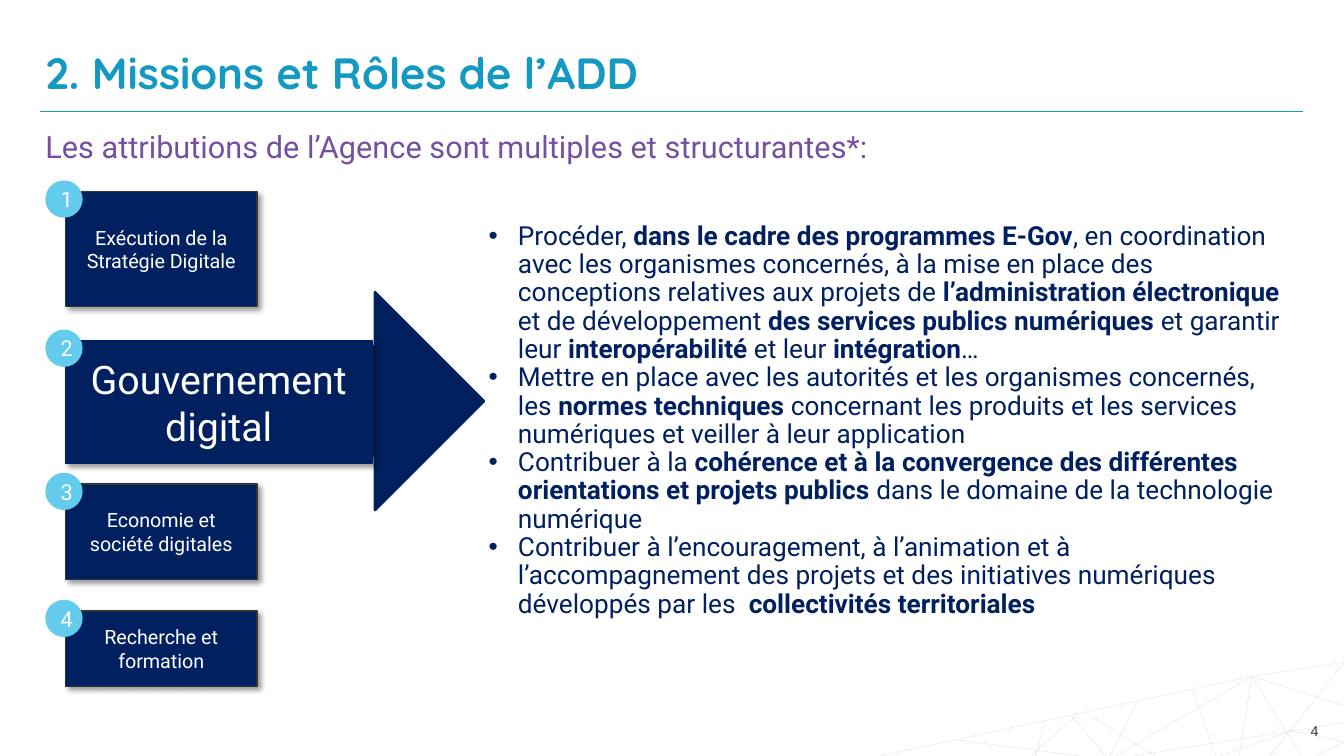
from lxml.etree import SubElement
from pptx import Presentation
from pptx.dml.color import RGBColor
from pptx.enum.shapes import MSO_CONNECTOR, MSO_SHAPE
from pptx.enum.text import MSO_ANCHOR, MSO_AUTO_SIZE, PP_ALIGN
from pptx.oxml.ns import qn
from pptx.util import Inches, Pt

NAVY = RGBColor(0x00, 0x20, 0x60)
TEAL = RGBColor(0x14, 0x9A, 0xC2)
SKY = RGBColor(0x63, 0xCC, 0xEC)
PLUM = RGBColor(0x75, 0x50, 0xA1)
DARK = RGBColor(0x33, 0x33, 0x33)
PALE = RGBColor(0xE0, 0xE0, 0xE0)
WHITE = RGBColor(0xFF, 0xFF, 0xFF)

# The grid has ten columns and ten rows to the inch.
COLS, ROWS = 133.33, 75
LEFT, RIGHT = 4.5, 129.3
BADGE = 3.7

PEAK, KNOT = (124.2, 67.1), (128.1, 72.5)
EAST, MID = (133.33, 73.6), (111.2, 72.9)
MESH = [
    ((130.6, ROWS), EAST), ((126, ROWS), (COLS, 65.7)),
    ((112.4, ROWS), (COLS, 71.7)), ((118.3, 68.4), (120.6, ROWS)),
    (PEAK, (COLS, 65.7)), ((102.8, 74.5), (107, 70.8)),
    ((87.3, ROWS), PEAK), ((102.4, ROWS), (102.8, 74.5)),
    (PEAK, (129.1, ROWS)), (PEAK, (122.9, ROWS)),
    ((121, ROWS), KNOT), (KNOT, EAST), (MID, (114.6, ROWS)),
    ((94.9, 73.4), (107.2, ROWS)), ((110.7, ROWS), PEAK),
    ((102.8, ROWS), (103.6, 71.5)), ((106.3, 71), (109.7, ROWS)),
    ((110.1, ROWS), (112.8, 69.6)), ((107.7, 70.7), MID),
    (PEAK, (COLS, 70)),
]

# Label, top row, width, height, text size, line colour
STEPS = [
    ("Exécution de la Stratégie Digitale", 19, 19, 11.4, 14.1, DARK),
    ("Gouvernement digital", 33.8, 30.4, 12.2, 28.1, NAVY),
    ("Economie et société digitales", 48, 19, 9.5, 14.1, DARK),
    ("Recherche et formation", 60.6, 19, 7.5, 14.1, DARK),
]

# Runs alternate between regular and bold.
ROLES = [
    ["Procéder, ", "dans le cadre des programmes E-Gov",
     ", en coordination avec les organismes concernés, à la mise en place "
     "des conceptions relatives aux projets de ",
     "l’administration électronique ", "et de développement ",
     "des services publics numériques ", "et garantir leur ",
     "interopérabilité", " et leur ", "intégration", "…"],
    ["Mettre en place avec les autorités et les organismes concernés, les ",
     "normes techniques ",
     "concernant les produits et les services numériques et veiller à leur "
     "application"],
    ["Contribuer à la ",
     "cohérence et à la convergence des différentes orientations et projets "
     "publics ",
     "dans le domaine de la technologie numérique"],
    ["Contribuer à l’encouragement, à l’animation et à l’accompagnement des "
     "projets et des initiatives numériques développés par les  ",
     "collectivités territoriales"],
]


def grid(*cells):
    return [Inches(cell / 10) for cell in cells]


def add_run(para, text, size, color, face="Roboto", bold=False):
    run = para.add_run()
    run.text = text
    font = run.font
    font.size, font.name, font.bold = Pt(size), face, bold
    font.color.rgb = color


def set_frame(frame, anchor=MSO_ANCHOR.TOP, inset=None, wrap=True):
    frame.word_wrap = wrap
    frame.auto_size = MSO_AUTO_SIZE.NONE
    frame.vertical_anchor = anchor
    if inset is not None:
        frame.margin_left = frame.margin_right = inset
        frame.margin_top = frame.margin_bottom = inset


def add_line(slide, start, end, color, width):
    line = slide.shapes.add_connector(
        MSO_CONNECTOR.STRAIGHT, *grid(*start, *end))
    line.line.color.rgb = color
    line.line.width = Pt(width)
    SubElement(line._element.spPr, qn("a:effectLst"))


def add_block(slide, kind, cells, fill, edge=None, width=1):
    block = slide.shapes.add_shape(kind, *grid(*cells))
    block.shadow.inherit = False
    block.fill.solid()
    block.fill.fore_color.rgb = fill
    if edge is None:
        block.line.fill.background()
    else:
        block.line.color.rgb = edge
        block.line.width = Pt(width)
    return block


def add_label(block, text, size):
    set_frame(block.text_frame, MSO_ANCHOR.MIDDLE)
    para = block.text_frame.paragraphs[0]
    para.alignment = PP_ALIGN.CENTER
    add_run(para, text, size, WHITE)


def cast_shadow(block):
    """Drop a soft black shadow to the lower right."""
    effects = block._element.spPr.find(qn("a:effectLst"))
    shadow = SubElement(effects, qn("a:outerShdw"), blurRad=str(Pt(4)),
                        dist=str(Pt(3)), dir="2700000", algn="tl",
                        rotWithShape="0")
    black = SubElement(shadow, qn("a:srgbClr"), val="000000")
    SubElement(black, qn("a:alpha"), val="40000")


def add_step(slide, num, step):
    """Add a shadowed box with its numbered badge on the corner."""
    text, top, width, height, size, edge = step
    box = add_block(slide, MSO_SHAPE.RECTANGLE,
                    (LEFT + 2, top, width, height), NAVY, edge)
    cast_shadow(box)
    add_label(box, text, size)
    badge = add_block(slide, MSO_SHAPE.OVAL,
                      (LEFT, top - 1.1, BADGE, BADGE), SKY)
    add_label(badge, str(num), 15.6)


def add_text(slide, cells, text, size, color, align, face="Roboto", **frame):
    box = slide.shapes.add_textbox(*grid(*cells))
    set_frame(box.text_frame, inset=0, **frame)
    para = box.text_frame.paragraphs[0]
    para.alignment = align
    add_run(para, text, size, color, face)


def set_title(slide, text):
    title = slide.shapes.title
    title.left, title.top, title.width, title.height = grid(
        LEFT, 4.5, 125.3, 4.9)
    set_frame(title.text_frame, inset=0)
    para = title.text_frame.paragraphs[0]
    para.alignment = PP_ALIGN.LEFT
    add_run(para, text, 31.2, TEAL, "Quicksand", True)


def add_roles(slide):
    frame = slide.shapes.add_textbox(*grid(47.5, 21.6, 81.8, 40.7)).text_frame
    set_frame(frame)
    for num, role in enumerate(ROLES):
        para = frame.add_paragraph() if num else frame.paragraphs[0]
        para.line_spacing = 0.9
        props = para._p.get_or_add_pPr()
        props.set("marL", str(Inches(0.29)))
        props.set("indent", str(-Inches(0.29)))
        SubElement(props, qn("a:buFont"), typeface="Arial")
        SubElement(props, qn("a:buChar"), char="•")
        for place, text in enumerate(role):
            add_run(para, text, 18.7, NAVY, bold=place % 2 == 1)


def main():
    deck = Presentation()
    deck.slide_width, deck.slide_height = grid(COLS, ROWS)
    slide = deck.slides.add_slide(deck.slide_layouts[5])
    for start, end in MESH:
        add_line(slide, start, end, PALE, 0.25)
    add_text(slide, (129, 71.6, 1.8, 1.8), "4", 10.2, DARK, PP_ALIGN.RIGHT,
             "Arial", anchor=MSO_ANCHOR.MIDDLE, wrap=False)
    add_line(slide, (4, 11), (RIGHT, 11), TEAL, 0.5)
    add_block(slide, MSO_SHAPE.RIGHT_ARROW, (12.2, 29, 35.8, 21.6),
              NAVY, NAVY, 2)
    set_title(slide, "2. Missions et Rôles de l’ADD")
    add_text(slide, (LEFT, 12.7, 125.3, 3.7),
             "Les attributions de l’Agence sont multiples et structurantes*:",
             21.9, PLUM, PP_ALIGN.JUSTIFY)
    for num, step in enumerate(STEPS, 1):
        add_step(slide, num, step)
    add_roles(slide)
    deck.save("out.pptx")


if __name__ == "__main__":
    main()
